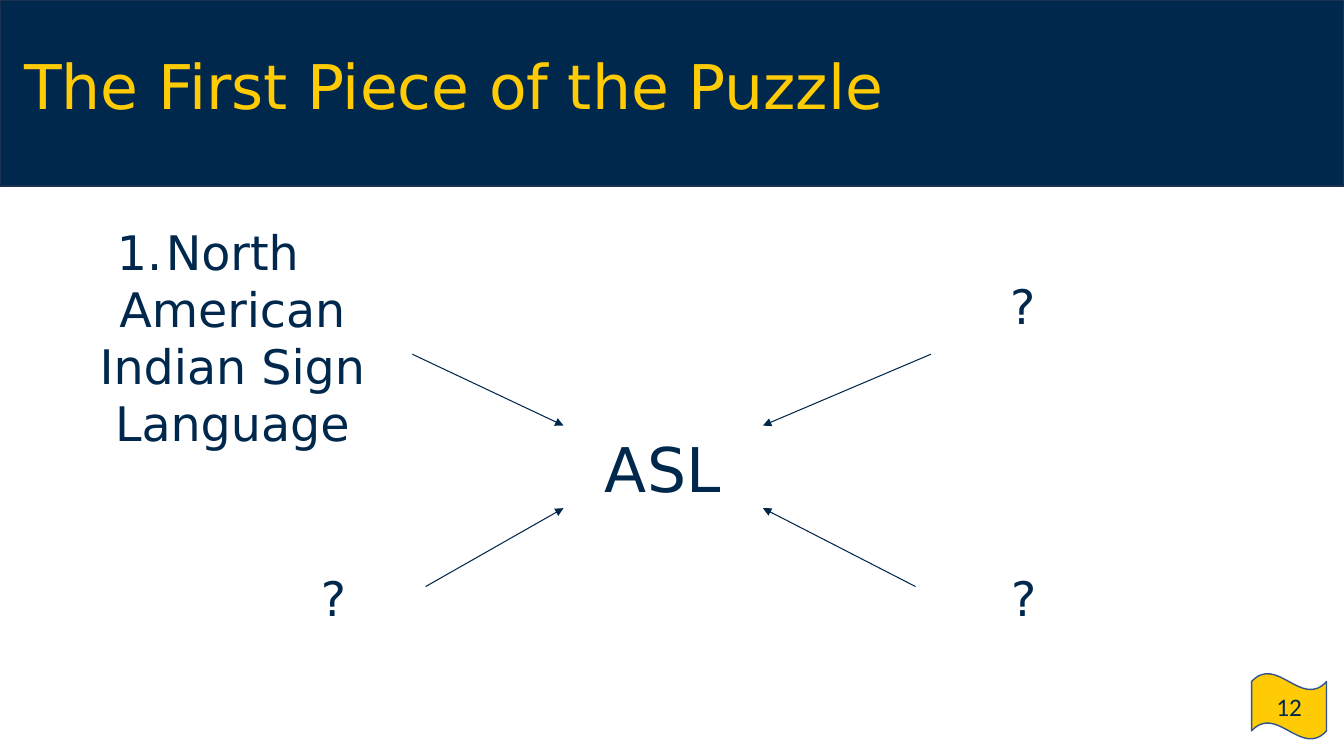
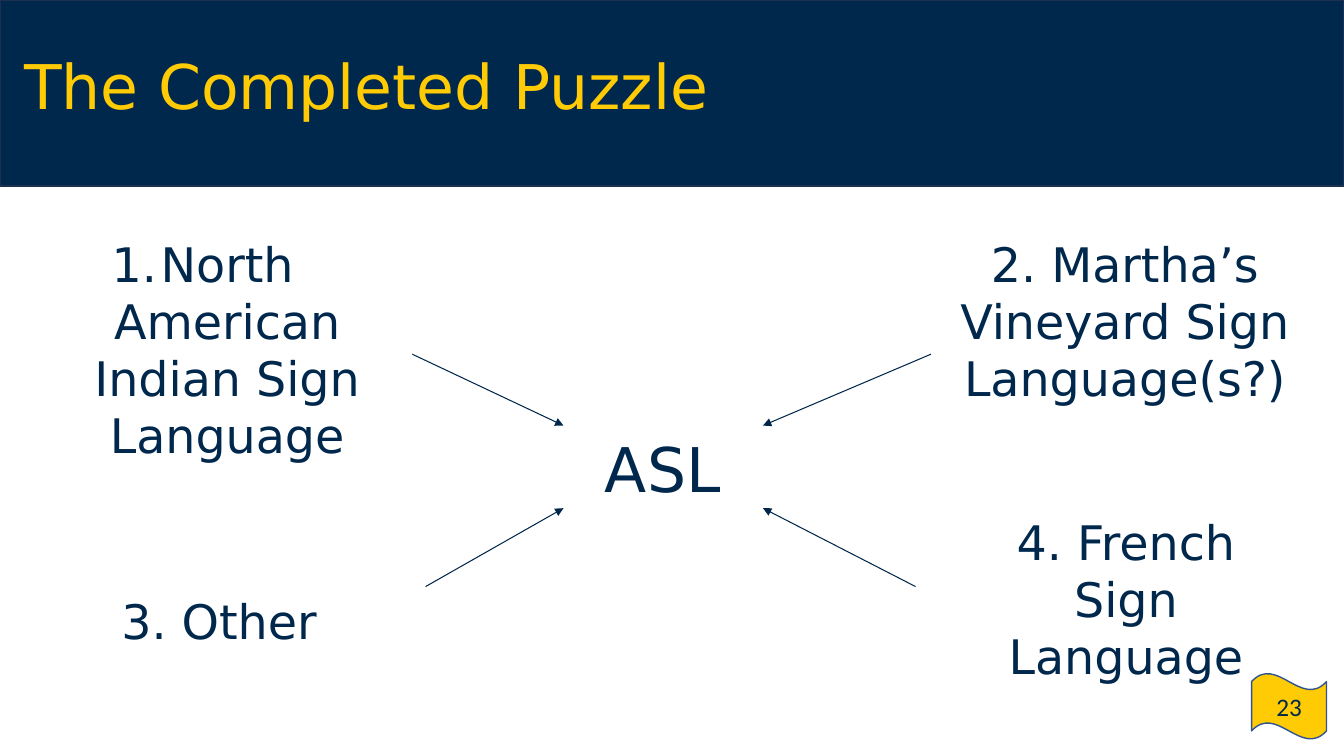
from lxml.etree import SubElement
from pptx import Presentation
from pptx.dml.color import RGBColor
from pptx.enum.shapes import MSO_CONNECTOR, MSO_SHAPE
from pptx.enum.text import MSO_ANCHOR, MSO_AUTO_SIZE, PP_ALIGN
from pptx.oxml.ns import qn
from pptx.util import Pt

NAVY, GOLD = "00274C", "FFCB05"
BAND_LINE, FLAG_LINE, ARROW = "1C3052", "31538F", "00264B"
FONT, NUMBER_FONT = "DejaVu Sans", "Calibri"
WIDTH, HEIGHT = 960, 540

BAND = (0, 0, WIDTH, 133)
TITLE = (10, 12, 779, 104)
FLAG = (894, 481, 53.5, 47)
CENTER = (425, 304, 103, 84)
# Each arrow runs from a piece of the puzzle to the centre.
ARROWS = [
    (294.5, 253, 402.5, 304),
    (665, 253, 545, 304),
    (304, 419, 402.5, 363),
    (654, 419, 545, 363),
]
NATIVE = "North American Indian Sign Language"

# Title, page number, then pieces as (text, box, numbered)
SLIDES = [
    ("The First Piece of the Puzzle", "12", [
        (NATIVE, (19, 155.5, 258, 172), True),
        ("?", (665, 194.5, 131, 48), False),
        ("?", (208, 402.5, 60.5, 48), False),
        ("?", (701, 402.5, 60.5, 48), False),
    ]),
    ("The Completed Puzzle", "23", [
        (NATIVE, (17.5, 164, 253.5, 172), True),
        ("2. Martha’s Vineyard Sign Language(s?)", (665, 164, 277, 131), False),
        ("3. Other", (55.5, 419, 202, 48), False),
        ("4. French Sign Language", (693, 363, 222.5, 131), False),
    ]),
]


def rgb(color):
    return RGBColor.from_string(color)


def points(values):
    return [Pt(v) for v in values]


def write(shape, text, size=34, color=NAVY, font=FONT, align=PP_ALIGN.CENTER,
          anchor=MSO_ANCHOR.TOP, spacing=1.0):
    tf = shape.text_frame
    tf.auto_size = MSO_AUTO_SIZE.NONE
    tf.word_wrap = True
    tf.vertical_anchor = anchor
    p = tf.paragraphs[0]
    p.alignment = align
    p.line_spacing = spacing
    r = p.add_run()
    r.text = text
    r.font.size = Pt(size)
    r.font.name = font
    r.font.color.rgb = rgb(color)
    return p


def add_box(s, preset, box, fill, line):
    sp = s.shapes.add_shape(preset, *points(box))
    sp.shadow.inherit = False
    sp.fill.solid()
    sp.fill.fore_color.rgb = rgb(fill)
    sp.line.color.rgb = rgb(line)
    sp.line.width = Pt(1)
    return sp


def add_label(s, text, box, numbered=False, **style):
    p = write(s.shapes.add_textbox(*points(box)), text, **style)
    if numbered:
        pPr = p._p.get_or_add_pPr()
        pPr.set("marL", str(Pt(36)))
        pPr.set("indent", str(Pt(-35)))
        SubElement(pPr, qn("a:buAutoNum"), type="arabicPeriod")


def add_arrow(s, ends):
    cxn = s.shapes.add_connector(MSO_CONNECTOR.STRAIGHT, *points(ends))
    cxn.line.color.rgb = rgb(ARROW)
    cxn.line.width = Pt(0.75)
    SubElement(cxn.line._get_or_add_ln(), qn("a:tailEnd"), type="triangle")
    SubElement(cxn._element.spPr, qn("a:effectLst"))


def add_header(s, text, band_box, title_box):
    title = s.shapes.title
    title.left, title.top, title.width, title.height = points(title_box)
    write(title, text, size=44, color=GOLD, align=PP_ALIGN.LEFT,
          anchor=MSO_ANCHOR.MIDDLE, spacing=0.9)
    band = add_box(s, MSO_SHAPE.RECTANGLE, band_box, NAVY, BAND_LINE)
    title.element.addprevious(band.element)  # keep the band behind the title


def add_page_flag(s, number, box):
    flag = add_box(s, MSO_SHAPE.WAVE, box, GOLD, FLAG_LINE)
    write(flag, number, size=18, font=NUMBER_FONT, anchor=MSO_ANCHOR.MIDDLE)


def add_puzzle_slide(prs, title, number, pieces):
    s = prs.slides.add_slide(prs.slide_layouts[5])
    add_header(s, title, BAND, TITLE)
    add_page_flag(s, number, FLAG)
    for (text, box, numbered), ends in zip(pieces, ARROWS):
        add_label(s, text, box, numbered)
        add_arrow(s, ends)
    add_label(s, "ASL", CENTER, size=44, align=PP_ALIGN.LEFT)


def main():
    prs = Presentation()
    prs.slide_width, prs.slide_height = Pt(WIDTH), Pt(HEIGHT)
    for title, number, pieces in SLIDES:
        add_puzzle_slide(prs, title, number, pieces)
    prs.save("out.pptx")


if __name__ == "__main__":
    main()
